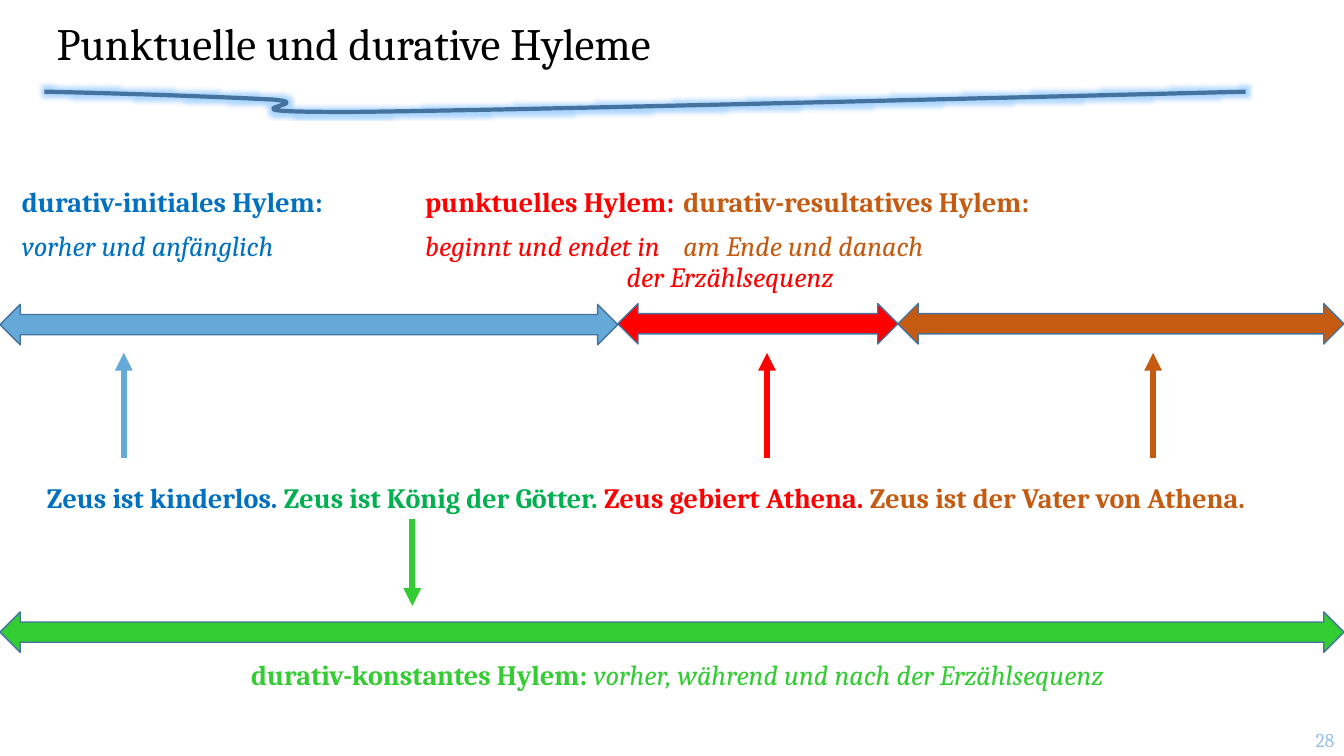
from lxml import etree
from pptx import Presentation
from pptx.dml.color import RGBColor
from pptx.enum.shapes import MSO_CONNECTOR, MSO_SHAPE
from pptx.enum.text import MSO_ANCHOR, MSO_AUTO_SIZE, PP_ALIGN
from pptx.oxml import parse_xml
from pptx.oxml.ns import nsdecls, qn
from pptx.util import Cm, Pt

STRAIGHT = MSO_CONNECTOR.STRAIGHT
DOUBLE_ARROW = MSO_SHAPE.LEFT_RIGHT_ARROW
MIDDLE, TOP = MSO_ANCHOR.MIDDLE, MSO_ANCHOR.TOP
NO_FIT = MSO_AUTO_SIZE.NONE
LEFT, CENTER, RIGHT = PP_ALIGN.LEFT, PP_ALIGN.CENTER, PP_ALIGN.RIGHT

BLACK = RGBColor(0x00, 0x00, 0x00)
BLUE = RGBColor(0x00, 0x70, 0xC0)
SKY = RGBColor(0x65, 0xA9, 0xD9)
PALE = RGBColor(0x9D, 0xC3, 0xE6)
OUTLINE = RGBColor(0x43, 0x73, 0x9E)
RED = RGBColor(0xFF, 0x00, 0x00)
BROWN = RGBColor(0xC5, 0x5A, 0x11)
GREEN = RGBColor(0x00, 0xB0, 0x50)
LIME = RGBColor(0x33, 0xCC, 0x33)


def bezier(start, first, second, end, steps=24):
    """Points along a cubic curve, without its start."""
    for step in range(1, steps + 1):
        t = step / steps
        weights = ((1 - t) ** 3, 3 * t * (1 - t) ** 2, 3 * t * t * (1 - t), t ** 3)
        yield tuple(sum(weight * point[axis] for weight, point
                        in zip(weights, (start, first, second, end)))
                    for axis in (0, 1))


class SlideBuilder:
    font = "Cambria"

    def __init__(self, page):
        self.page = page

    def frame(self, box, left, top, width, height, anchor):
        box.left, box.top = Cm(left), Cm(top)
        box.width, box.height = Cm(width), Cm(height)
        frame = box.text_frame
        frame.word_wrap = True
        frame.auto_size = NO_FIT
        frame.vertical_anchor = anchor
        return frame

    def format_para(self, para, align=LEFT, before=0, indent=0):
        para.alignment = align
        para.line_spacing = 0.9
        para.space_before = Pt(before)
        properties = para._p.get_or_add_pPr()
        properties.set("marL", str(Cm(indent)))
        properties.set("indent", "0")
        etree.SubElement(properties, qn("a:buNone"))

    def span(self, para, text, color, size=20, bold=False, italic=False):
        span = para.add_run()
        span.text = text
        font = span.font
        font.name, font.size = self.font, Pt(size)
        font.bold, font.italic = bold, italic
        font.color.rgb = color

    def title(self, text):
        frame = self.frame(self.page.shapes.title, 1.17, 0, 31.17, 2.31, MIDDLE)
        para = frame.paragraphs[0]
        self.format_para(para)
        self.span(para, text, BLACK, 32)

    def body(self, rows):
        frame = self.frame(self.page.placeholders[1], 0.3, 4.62, 33.55, 13.4, TOP)
        for number, (layout, spans) in enumerate(rows):
            para = frame.add_paragraph() if number else frame.paragraphs[0]
            self.format_para(para, **layout)
            for text, color, style in spans:
                self.span(para, text, color, **style)

    def page_number(self, text):
        box = self.page.shapes.add_textbox(0, 0, 0, 0)
        para = self.frame(box, 32.03, 18.26, 1.85, 0.74, MIDDLE).paragraphs[0]
        para.alignment = RIGHT
        self.span(para, text, PALE, 14)

    def glowing_curve(self, points):
        path = [points[0]]
        for first in range(0, len(points) - 1, 3):
            path.extend(bezier(*points[first:first + 4]))
        path = [(Cm(x), Cm(y)) for x, y in path]
        builder = self.page.shapes.build_freeform(*path[0])
        builder.add_line_segments(path[1:], close=False)
        curve = builder.convert_to_shape()
        curve.fill.background()
        curve.line.color.rgb, curve.line.width = OUTLINE, Pt(3)
        curve._element.spPr.append(parse_xml(
            f'<a:effectLst {nsdecls("a")}><a:glow rad="63500"><a:srgbClr val="3399FF">'
            '<a:alpha val="40000"/></a:srgbClr></a:glow></a:effectLst>'))

    def span_arrow(self, left, right, top, color):
        arrow = self.page.shapes.add_shape(
            DOUBLE_ARROW, Cm(left), Cm(top), Cm(right - left), Cm(1.02))
        arrow.shadow.inherit = False
        arrow.fill.solid()
        arrow.fill.fore_color.rgb = color
        arrow.line.color.rgb, arrow.line.width = OUTLINE, Pt(1)

    def pointer(self, x, start, end, color):
        pointer = self.page.shapes.add_connector(STRAIGHT, Cm(x), Cm(start), Cm(x), Cm(end))
        pointer.line.color.rgb, pointer.line.width = color, Pt(4.25)
        etree.SubElement(pointer.line._get_or_add_ln(), qn("a:tailEnd"), type="triangle")
        etree.SubElement(pointer._element.spPr, qn("a:effectLst"))


def main():
    deck = Presentation()
    deck.slide_width, deck.slide_height = Cm(33.87), Cm(19.05)
    slide = SlideBuilder(deck.slides.add_slide(deck.slide_layouts[1]))
    bold, italic = {"bold": True}, {"italic": True}

    # Heading
    slide.glowing_curve([(1.12, 2.31), (3.33, 2.36), (5.56, 2.44), (6.88, 2.51),
                         (8.2, 2.62), (4.95, 2.84), (9.04, 2.82),
                         (13.13, 2.77), (22.25, 2.54), (31.39, 2.31)])
    slide.title("Punktuelle und durative Hyleme")

    # Hylem types, example sentences and constant hylem; tabs fall on whole inches
    slide.body([
        ({}, [
            ("durativ-initiales Hylem:\t\t\t", BLUE, bold),
            ("punktuelles Hylem:\t ", RED, bold),
            ("durativ-resultatives Hylem:", BROWN, bold)]),
        ({"before": 10}, [
            ("vorher und anfänglich\t\t\t\t", BLUE, italic),
            ("beginnt und endet in\t ", RED, italic),
            ("am Ende und danach", BROWN, italic)]),
        ({"indent": 15.24}, [("der Erzählsequenz", RED, italic)]),
        ({"before": 136.6, "indent": 0.63}, [
            ("Zeus ist kinderlos. ", BLUE, bold),
            ("Zeus ist König der Götter. ", GREEN, bold),
            ("Zeus gebiert Athena. ", RED, bold),
            ("Zeus ist der Vater von Athena.", BROWN, bold)]),
        ({"before": 105, "align": CENTER}, [
            ("durativ-konstantes Hylem: ", LIME, bold),
            ("vorher, während und nach der Erzählsequenz", LIME, italic)]),
    ])
    slide.page_number("28")

    # Time spans
    for left, right, top, color in ((0, 15.57, 7.67, SKY), (15.57, 22.63, 7.65, RED),
                                    (22.63, 33.87, 7.65, BROWN), (0, 33.87, 15.42, LIME)):
        slide.span_arrow(left, right, top, color)

    # Pointers from the sentences to their time spans
    for x, color in ((3.12, SKY), (19.33, RED), (29.06, BROWN)):
        slide.pointer(x, 11.53, 8.89, color)
    slide.pointer(10.39, 13.08, 15.27, LIME)

    deck.save("out.pptx")


if __name__ == "__main__":
    main()
